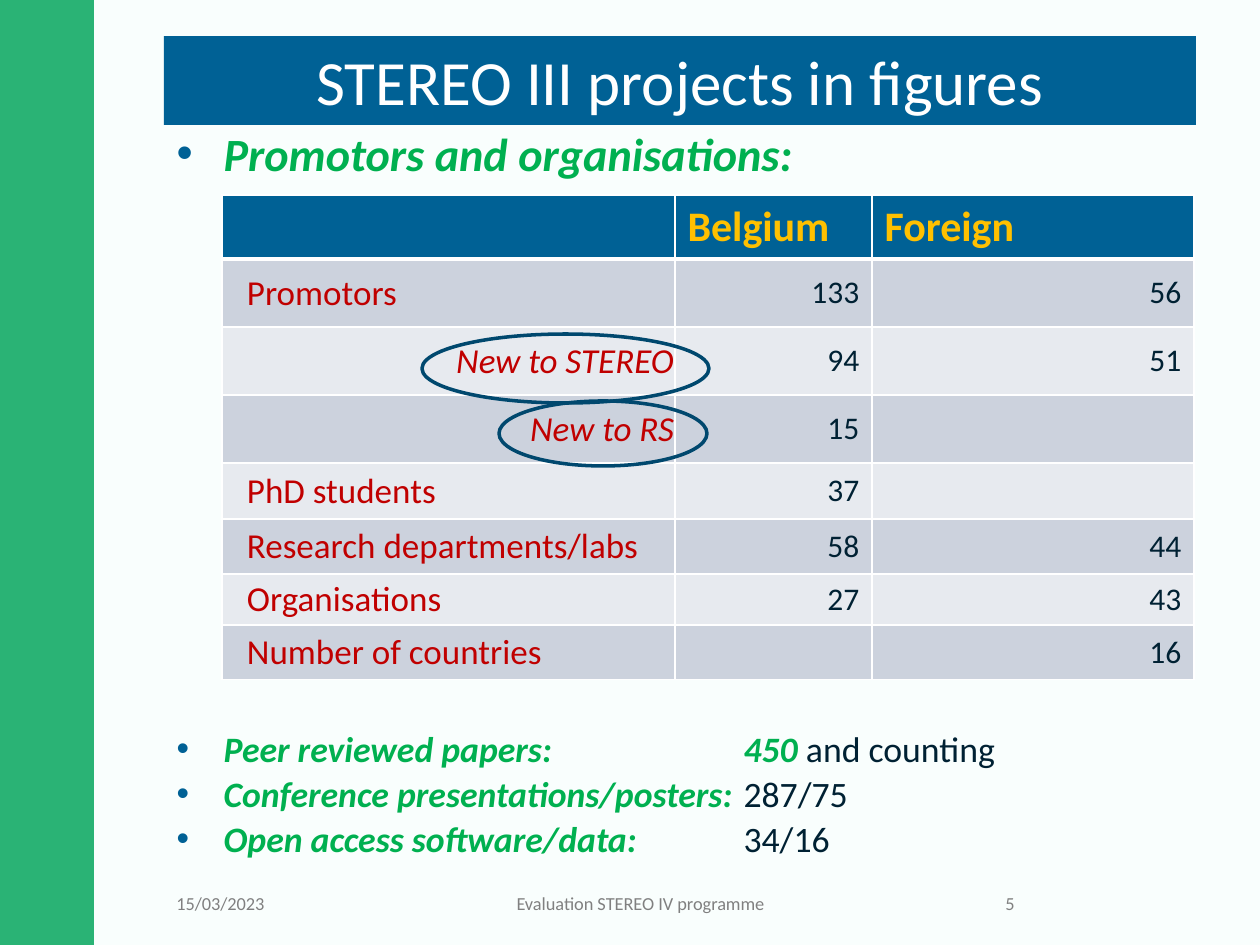
from pptx import Presentation
from pptx.dml.color import RGBColor
from pptx.enum.shapes import MSO_SHAPE as Shape
from pptx.enum.text import MSO_ANCHOR as Anchor, MSO_AUTO_SIZE as AutoSize, PP_ALIGN as Align
from pptx.oxml import parse_xml
from pptx.oxml.ns import nsdecls, qn
from pptx.util import Emu, Pt
from lxml.etree import SubElement

EMU_PER_PX = 914400 / 126
MINT, GREEN = RGBColor(0xCA, 0xFB, 0xED), RGBColor(0x03, 0xA1, 0x58)
WHITE, GREY = RGBColor(0xFF, 0xFF, 0xFF), RGBColor(0x80, 0x80, 0x80)
BLUE, DEEP_BLUE = RGBColor(0x00, 0x61, 0x95), RGBColor(0x00, 0x48, 0x6E)
INK, LEAF = RGBColor(0x00, 0x21, 0x33), RGBColor(0x00, 0xB0, 0x50)
GOLD, RED = RGBColor(0xFF, 0xC0, 0x00), RGBColor(0xC0, 0x00, 0x00)
BAND_DARK, BAND_LIGHT = RGBColor(0xCC, 0xD2, 0xDD), RGBColor(0xE7, 0xEA, 0xEF)

TITLE = {"size": 36, "color": WHITE}
FOOTER = {"size": 10.5, "color": GREY}
HEADING = {"size": 26.4, "color": LEAF, "bold": True, "italic": True}
TOPIC = {**HEADING, "size": 20.4}
PLAIN = {"size": 20.4, "color": INK, "bold": False, "italic": False}
HEAD_CELL = {"size": 24, "color": GOLD, "bold": True}
LABEL = {"size": 20, "color": RED, "bold": False, "italic": False}
SUB_LABEL = {**LABEL, "italic": True}
VALUE = {"size": 18, "color": INK, "bold": False}

HEADERS = ["", "Belgium", "Foreign"]
ROWS = [
    ("Promotors", "133", "56"),
    ("New to STEREO", "94", "51"),
    ("New to RS", "15", ""),
    ("PhD students", "37", ""),
    ("Research departments/labs", "58", "44"),
    ("Organisations", "27", "43"),
    ("Number of countries", "", "16"),
]
SUB_ROWS = {"New to STEREO", "New to RS"}
COLUMN_WIDTHS = [453, 197, 322]
ROW_HEIGHTS = [64, 68, 68, 68, 56, 55, 51, 55]

# Each bullet: space before in points, then its runs
BULLETS = [
    (0, [("Promotors and organisations:", HEADING)]),
    (311, [("Peer reviewed papers: \t\t\t450", TOPIC), (" and counting", PLAIN)]),
    (0, [("Conference presentations/posters: \t", TOPIC), ("287/75", PLAIN)]),
    (0, [("Open access software/data: \t\t", TOPIC), ("34/16", PLAIN)]),
]


def px(length):
    return Emu(round(length * EMU_PER_PX))


class SlideBuilder:
    def __init__(self, slide, font_name):
        self.slide = slide
        self.font_name = font_name

    def place(self, shape, box):
        for name, length in zip(("left", "top", "width", "height"), box):
            setattr(shape, name, px(length))

    def add_span(self, para, text, style):
        span = para.add_run()
        span.text = text
        span.font.name = self.font_name
        for name, value in style.items():
            if name == "color":
                span.font.color.rgb = value
            else:
                setattr(span.font, name, Pt(value) if name == "size" else value)

    def panel(self, box, color, opacity):
        """Add a translucent rectangle behind the placeholders."""
        shape = self.slide.shapes.add_shape(Shape.RECTANGLE, *map(px, box))
        shape.shadow.inherit = False
        shape.line.fill.background()
        shape.fill.solid()
        shape.fill.fore_color.rgb = color
        tone = shape.element.spPr.find(qn("a:solidFill")).find(qn("a:srgbClr"))
        SubElement(tone, qn("a:alpha"), val=str(opacity * 1000))
        self.slide.shapes.element.insert(2, shape.element)

    def title(self, box, text):
        shape = self.slide.shapes.title
        self.place(shape, box)
        shape.fill.solid()
        shape.fill.fore_color.rgb = BLUE
        frame = shape.text_frame
        frame.auto_size = AutoSize.NONE
        frame.vertical_anchor = Anchor.MIDDLE
        para = frame.paragraphs[0]
        para.alignment = Align.CENTER
        self.add_span(para, text, TITLE)

    def bullets(self, box, items):
        shape = self.slide.placeholders[1]
        self.place(shape, box)
        frame = shape.text_frame
        frame.auto_size = AutoSize.NONE
        frame.vertical_anchor = Anchor.TOP
        for index, (space_before, spans) in enumerate(items):
            para = frame.add_paragraph() if index else frame.paragraphs[0]
            properties = para._p.get_or_add_pPr()
            properties.set("marL", str(px(47)))
            properties.set("indent", str(px(-47)))
            tone = SubElement(properties, qn("a:buClr"))
            SubElement(tone, qn("a:srgbClr"), val=str(BLUE))
            SubElement(properties, qn("a:buFont"), typeface="Arial")
            SubElement(properties, qn("a:buChar"), char="•")
            para.line_spacing = 0.8
            para.space_before, para.space_after = Pt(space_before), Pt(6)
            for text, style in spans:
                self.add_span(para, text, style)

    def footer(self, box, text, alignment):
        frame = self.slide.shapes.add_textbox(*map(px, box)).text_frame
        frame.word_wrap = True
        frame.vertical_anchor = Anchor.MIDDLE
        para = frame.paragraphs[0]
        para.alignment = alignment
        self.add_span(para, text, FOOTER)

    def borders(self, cell, top, bottom):
        """Draw white cell edges; top and bottom are widths in points."""
        properties = cell._tc.get_or_add_tcPr()
        for index, (side, width) in enumerate(zip("LRTB", (1, 1, top, bottom))):
            properties.insert(index, parse_xml(
                f'<a:ln{side} {nsdecls("a")} w="{Pt(width)}"><a:solidFill>'
                f'<a:srgbClr val="{WHITE}"/></a:solidFill></a:ln{side}>'))

    def cell(self, cell, text, style, alignment, fill, edges):
        cell.fill.solid()
        cell.fill.fore_color.rgb = fill
        self.borders(cell, *edges)
        para = cell.text_frame.paragraphs[0]
        para.alignment = alignment
        if text:
            self.add_span(para, text, style)

    def table(self, left, top, headers, rows):
        size = (sum(COLUMN_WIDTHS), sum(ROW_HEIGHTS))
        table = self.slide.shapes.add_table(
            len(rows) + 1, len(headers), *map(px, (left, top, *size))).table
        for column, width in zip(table.columns, COLUMN_WIDTHS):
            column.width = px(width)
        for row, height in zip(table.rows, ROW_HEIGHTS):
            row.height = px(height)
        for column, text in enumerate(headers):
            self.cell(table.cell(0, column), text, HEAD_CELL, Align.LEFT, BLUE, (1, 3))
        for number, (label, *values) in enumerate(rows, 1):
            fill = BAND_DARK if number % 2 else BAND_LIGHT
            edges = (3 if number == 1 else 1, 1)
            is_sub = label in SUB_ROWS
            label_cell = table.cell(number, 0)
            label_cell.margin_left, label_cell.margin_right = px(25), px(1)
            label_cell.margin_top, label_cell.margin_bottom = px(1), 0
            self.cell(label_cell, label, SUB_LABEL if is_sub else LABEL,
                      Align.RIGHT if is_sub else Align.LEFT, fill, edges)
            for column, value in enumerate(values, 1):
                self.cell(table.cell(number, column), value, VALUE, Align.RIGHT, fill, edges)
            for column in range(len(headers)):
                table.cell(number, column).vertical_anchor = Anchor.MIDDLE

    def ring(self, box):
        shape = self.slide.shapes.add_shape(Shape.OVAL, *map(px, box))
        shape.shadow.inherit = False
        shape.fill.background()
        shape.line.color.rgb = DEEP_BLUE
        shape.line.width = Pt(2)


def main():
    deck = Presentation()
    deck.slide_width, deck.slide_height = px(1260), px(945)
    page = deck.slides.add_slide(deck.slide_layouts[1])
    page.background.fill.solid()
    page.background.fill.fore_color.rgb = MINT

    builder = SlideBuilder(page, "Calibri")
    builder.panel((0, 0, 94, 945), GREEN, 80)
    builder.panel((94, 0, 1166, 945), WHITE, 90)
    builder.title((164, 36, 1032, 89), "STEREO III projects in figures")
    builder.bullets((164, 130, 1032, 770), BULLETS)
    builder.footer((164, 878, 149, 50), "15/03/2023", Align.LEFT)
    builder.footer((323, 878, 635, 50), "Evaluation STEREO IV programme", Align.CENTER)
    builder.footer((968, 878, 59, 50), "5", Align.RIGHT)
    builder.table(222, 195, HEADERS, ROWS)
    builder.ring((422, 334, 287, 69))
    builder.ring((499, 401, 208, 65))
    deck.save("out.pptx")


if __name__ == "__main__":
    main()
